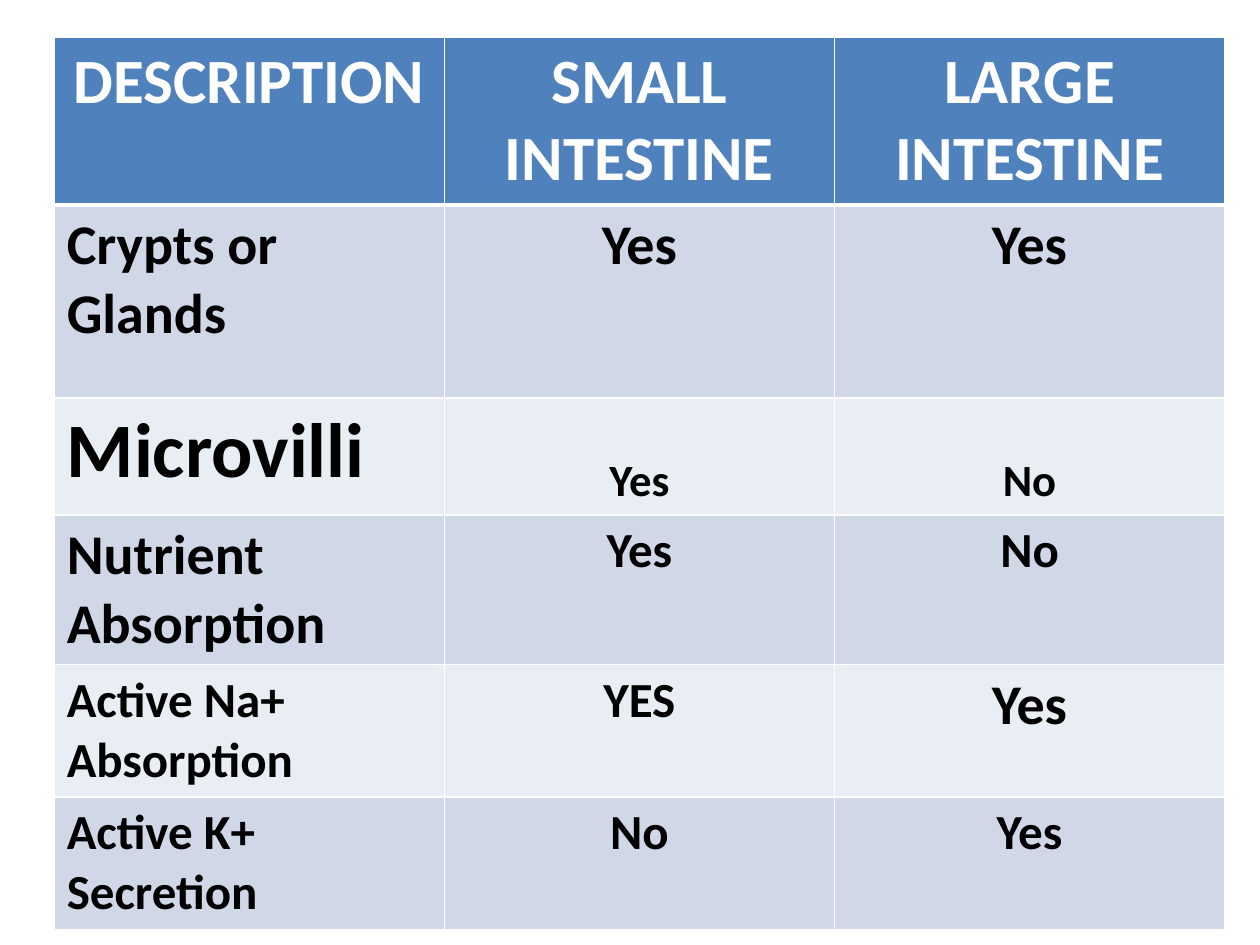
from pptx import Presentation
from pptx.dml.color import RGBColor
from pptx.enum.text import PP_ALIGN
from pptx.oxml import parse_xml
from pptx.oxml.ns import nsdecls
from pptx.util import Inches, Pt

WHITE, BLACK = "FFFFFF", "000000"
HEAD, DARK, LIGHT = "4F81BD", "D0D8E8", "E9EDF4"


def color(code):
    return RGBColor.from_string(code)


class Deck:
    font = "Calibri"

    def __init__(self, wide, high):
        self.prs = Presentation()
        self.prs.slide_width, self.prs.slide_height = Inches(wide), Inches(high)
        self.slide = self.prs.slides.add_slide(self.prs.slide_layouts[6])

    def x(self, part):
        return round(self.prs.slide_width * part / 100)

    def y(self, part):
        return round(self.prs.slide_height * part / 100)

    def table(self, left, top, width, highs, count):
        frame = self.slide.shapes.add_table(
            len(highs), count, self.x(left), self.y(top),
            self.x(width), self.y(sum(highs)))
        for row, high in zip(frame.table.rows, highs):
            row.height = self.y(high)
        return frame.table

    def edges(self, cell, widths):
        props = cell._tc.get_or_add_tcPr()
        for side, width in widths.items():
            props.append(parse_xml(
                f'<a:ln{side} {nsdecls("a")} w="{Pt(width)}"><a:solidFill>'
                f'<a:srgbClr val="{WHITE}"/></a:solidFill></a:ln{side}>'))

    def cell(self, cell, text, size, fill, ink, align, base=0):
        cell.fill.solid()
        cell.fill.fore_color.rgb = color(fill)
        para = cell.text_frame.paragraphs[0]
        para.alignment = align
        run = para.add_run()
        run.text = text
        for name, value in dict(name=self.font, size=Pt(size), bold=True).items():
            setattr(run.font, name, value)
        run.font.color.rgb = color(ink)
        if base:
            run._r.get_or_add_rPr().set("baseline", str(base * 1000))


# Each row: share of slide height, then (text, size, optional baseline)
ROWS = [
    (17.8, ("DESCRIPTION", 36), ("SMALL INTESTINE", 36), ("LARGE INTESTINE", 36)),
    (20.4, ("Crypts or Glands", 32), ("Yes", 32), ("Yes", 32)),
    (12.4, ("Microvilli", 44), ("Yes", 44, -25), ("No", 44, -25)),
    (15.8, ("Nutrient Absorption", 32), ("Yes", 28), ("No", 28)),
    (14, ("Active Na+ Absorption", 28), ("YES", 28), ("Yes", 32)),
    (14, ("Active K+ Secretion", 28), ("No", 28), ("Yes", 28)),
]


def main():
    deck = Deck(10, 7.5)

    # Comparison table
    grid = deck.table(4.3, 3.9, 92.9, [row[0] for row in ROWS], 3)
    for r, (_, *items) in enumerate(ROWS):
        top = r == 0
        fill = HEAD if top else DARK if r % 2 else LIGHT
        for c, (text, size, *base) in enumerate(items):
            cell = grid.cell(r, c)
            # A thick rule parts the header from the body
            deck.edges(cell, dict(L=1, R=1, T=3 if r == 1 else 1, B=3 if top else 1))
            align = PP_ALIGN.CENTER if top or c else PP_ALIGN.LEFT
            deck.cell(cell, text, size, fill, WHITE if top else BLACK, align, *base)

    deck.prs.save("out.pptx")


if __name__ == "__main__":
    main()
